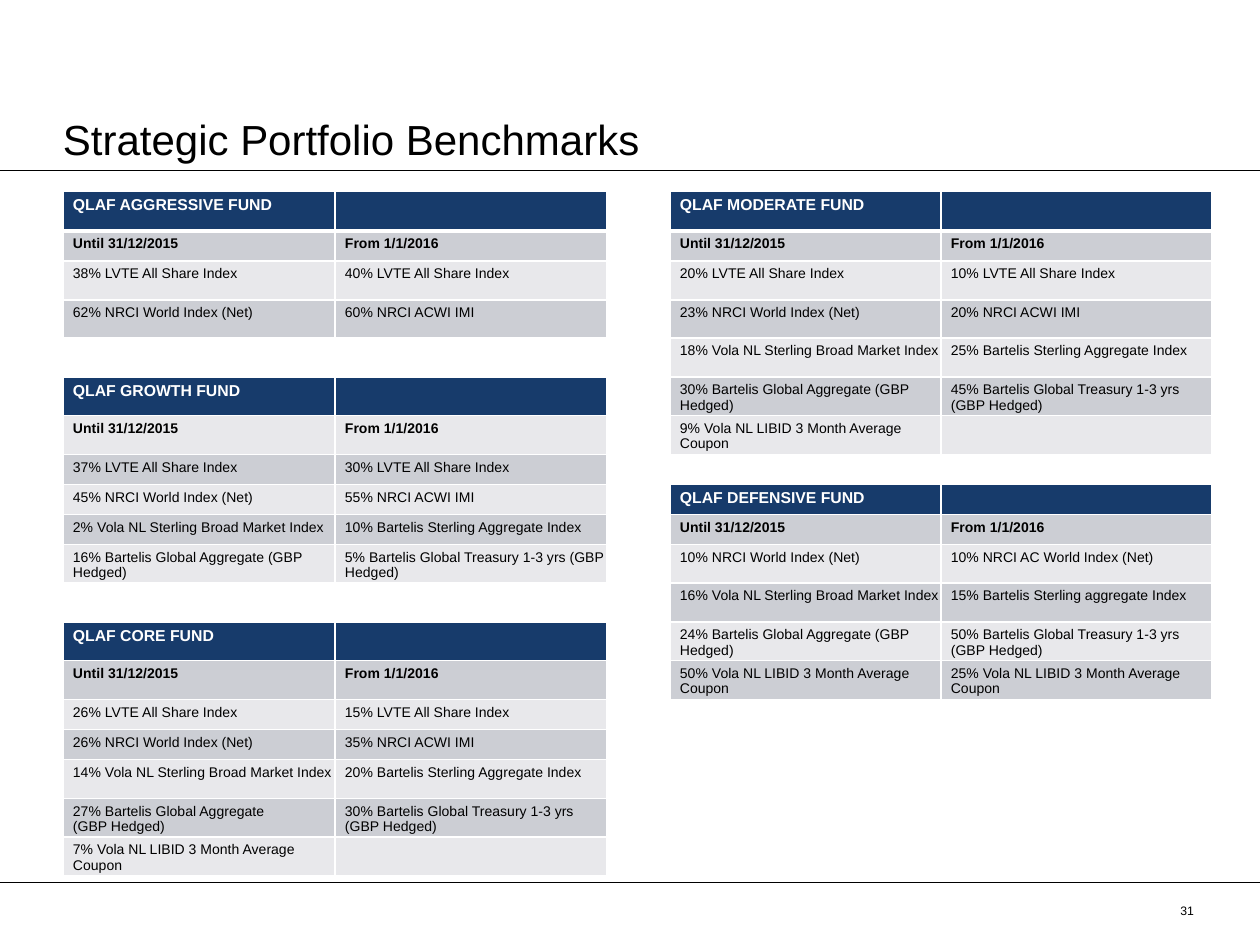
from pptx import Presentation
from pptx.dml.color import RGBColor
from pptx.enum.shapes import MSO_CONNECTOR
from pptx.enum.text import MSO_ANCHOR, PP_ALIGN
from pptx.oxml import parse_xml
from pptx.oxml.ns import nsdecls
from pptx.util import Pt
from lxml import etree

STRAIGHT = MSO_CONNECTOR.STRAIGHT
TOP, BOTTOM = MSO_ANCHOR.TOP, MSO_ANCHOR.BOTTOM
LEFT, RIGHT = PP_ALIGN.LEFT, PP_ALIGN.RIGHT
BLACK = RGBColor(0x00, 0x00, 0x00)
WHITE = RGBColor(0xFF, 0xFF, 0xFF)
NAVY = RGBColor(0x17, 0x3B, 0x6B)
GREY = RGBColor(0xCC, 0xCE, 0xD4)
PALE = RGBColor(0xE8, 0xE8, 0xEB)
PX = 914400 // 126
WIDTH, HEIGHT = 1260, 945

COLUMN_WIDTHS = [272, 272, 63, 271, 271]
ROW_HEIGHTS = [40, 30, 39, 38, 39, 38, 39, 30, 30, 30,
               38, 39, 38, 39, 30, 30, 39, 38, 38]
PERIODS = ("Until 31/12/2015", "From 1/1/2016")

FUNDS = [
    (0, 0, "QLAF AGGRESSIVE FUND", [
        ("38% LVTE All Share Index", "40% LVTE All Share Index"),
        ("62% NRCI World Index (Net)", "60% NRCI ACWI IMI"),
    ]),
    (5, 0, "QLAF GROWTH FUND", [
        ("37% LVTE All Share Index", "30% LVTE All Share Index"),
        ("45% NRCI World Index (Net)", "55% NRCI ACWI IMI"),
        ("2% Vola NL Sterling Broad Market Index", "10% Bartelis Sterling Aggregate Index"),
        ("16% Bartelis Global Aggregate (GBP Hedged)",
         "5% Bartelis Global Treasury 1-3 yrs (GBP Hedged)"),
    ]),
    (12, 0, "QLAF CORE FUND", [
        ("26% LVTE All Share Index", "15% LVTE All Share Index"),
        ("26% NRCI World Index (Net)", "35% NRCI ACWI IMI"),
        ("14% Vola NL Sterling Broad Market Index", "20% Bartelis Sterling Aggregate Index"),
        ("27% Bartelis Global Aggregate\n(GBP Hedged)",
         "30% Bartelis Global Treasury 1-3 yrs (GBP Hedged)"),
        ("7% Vola NL LIBID 3 Month Average Coupon", ""),
    ]),
    (0, 3, "QLAF MODERATE FUND", [
        ("20% LVTE All Share Index", "10% LVTE All Share Index"),
        ("23% NRCI World Index (Net)", "20% NRCI ACWI IMI"),
        ("18% Vola NL Sterling Broad Market Index", "25% Bartelis Sterling Aggregate Index"),
        ("30% Bartelis Global Aggregate (GBP Hedged)",
         "45% Bartelis Global Treasury 1-3 yrs (GBP Hedged)"),
        ("9% Vola NL LIBID 3 Month Average Coupon", ""),
    ]),
    (8, 3, "QLAF DEFENSIVE FUND", [
        ("10% NRCI World Index (Net)", "10% NRCI AC World Index (Net)"),
        ("16% Vola NL Sterling Broad Market Index", "15% Bartelis Sterling aggregate Index"),
        ("24% Bartelis Global Aggregate (GBP Hedged)",
         "50% Bartelis Global Treasury 1-3 yrs (GBP Hedged)"),
        ("50% Vola NL LIBID 3 Month Average Coupon",
         "25% Vola NL LIBID 3 Month Average Coupon"),
    ]),
]


class SlideBuilder:
    """Draws styled elements on one slide, measured in px."""

    font_name = "Arial"

    def __init__(self, slide):
        self.slide = slide

    def style(self, frame, size, color=BLACK, bold=False, align=LEFT):
        for paragraph in frame.paragraphs:
            paragraph.alignment = align
            font = paragraph.font
            font.name, font.size, font.bold = self.font_name, Pt(size), bold
            font.color.rgb = color

    def rule(self, y):
        rule = self.slide.shapes.add_connector(STRAIGHT, 0, y * PX, WIDTH * PX, y * PX)
        rule.line.color.rgb = BLACK
        rule.line.width = Pt(0.25)
        rule._element.spPr.append(parse_xml(f"<a:effectLst {nsdecls('a')}/>"))

    def text(self, text, x, y, width, height, size, anchor=TOP, align=LEFT, bottom=0):
        box = self.slide.shapes.add_textbox(x * PX, y * PX, width * PX, height * PX)
        frame = box.text_frame
        frame.word_wrap = True
        frame.vertical_anchor = anchor
        frame.margin_left = frame.margin_right = frame.margin_top = 0
        frame.margin_bottom = bottom * PX
        frame.text = text
        self.style(frame, size, align=align)

    def table(self, x, y, widths, heights):
        table = self.slide.shapes.add_table(
            len(heights), len(widths), x * PX, y * PX,
            sum(widths) * PX, sum(heights) * PX).table
        table.first_row = table.horz_banding = False
        for column, width in zip(table.columns, widths):
            column.width = width * PX
        for row, height in zip(table.rows, heights):
            row.height = height * PX
        for row in range(len(heights)):
            for column in range(len(widths)):
                cell = table.cell(row, column)
                self.borders(cell, top=3 if row == 1 else 1, bottom=3 if row == 0 else 1)
                self.cell(cell, "", WHITE)
        return table

    def borders(self, cell, top, bottom):
        properties = cell._tc.get_or_add_tcPr()
        for side, width in (("L", 1), ("R", 1), ("T", top), ("B", bottom)):
            border = parse_xml(
                f'<a:ln{side} {nsdecls("a")} w="{Pt(width)}"><a:solidFill>'
                f'<a:srgbClr val="{WHITE}"/></a:solidFill></a:ln{side}>')
            properties.append(border)

    def cell(self, cell, text, fill, size=8, color=BLACK, bold=False):
        cell.fill.solid()
        cell.fill.fore_color.rgb = fill
        cell.margin_left, cell.margin_top = 10 * PX, 5 * PX
        cell.margin_right = cell.margin_bottom = 0
        cell.text = text
        self.style(cell.text_frame, size, color, bold)
        if not text:
            end = cell.text_frame.paragraphs[0]._p
            if end.find("{*}endParaRPr") is None:
                mark = etree.SubElement(end, end.tag[:-1] + "endParaRPr")
                mark.set("sz", str(size * 100))

    def fund(self, table, top, left, title, holdings):
        for offset, texts in enumerate([(title, ""), PERIODS, *holdings]):
            row = top + offset
            for column, text in enumerate(texts, left):
                cell = table.cell(row, column)
                if offset == 0:
                    self.cell(cell, text, NAVY, 9, WHITE, True)
                else:
                    self.cell(cell, text, GREY if row % 2 else PALE, bold=offset == 1)


def main():
    presentation = Presentation()
    presentation.slide_width, presentation.slide_height = WIDTH * PX, HEIGHT * PX
    builder = SlideBuilder(presentation.slides.add_slide(presentation.slide_layouts[6]))
    for y in (882, 170):
        builder.rule(y)
    builder.text("31", 1144, 903, 50, 38, 7, align=RIGHT)
    builder.text("Strategic Portfolio Benchmarks", 63, 63, 1134, 107, 24, BOTTOM, bottom=6)
    benchmarks = builder.table(63, 191, COLUMN_WIDTHS, ROW_HEIGHTS)
    for fund in FUNDS:
        builder.fund(benchmarks, *fund)
    presentation.save("out.pptx")


if __name__ == "__main__":
    main()
